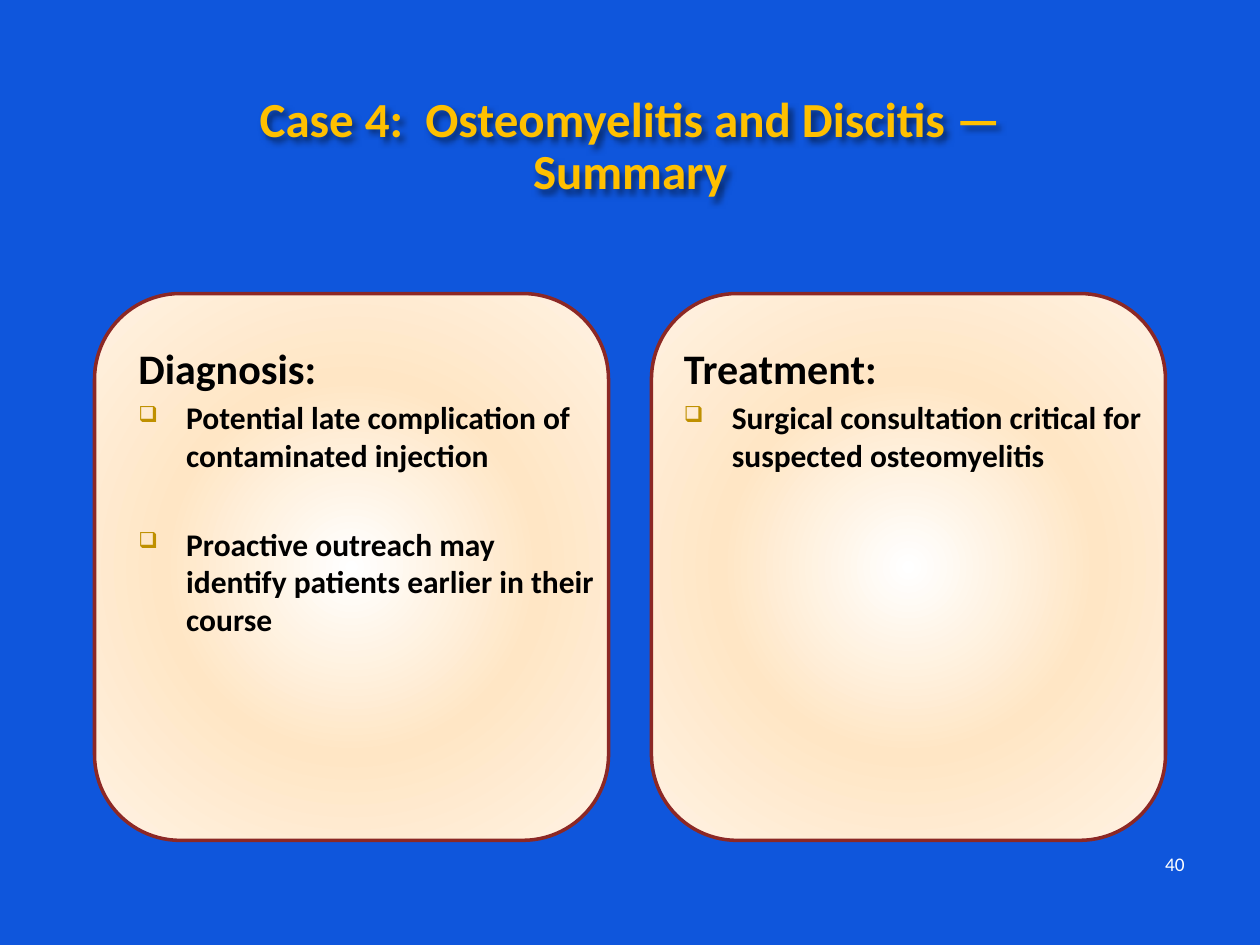
"""Build the Case 4 summary slide with diagnosis and treatment panels."""
from dataclasses import dataclass

from pptx import Presentation
from pptx.dml.color import RGBColor as RGB
from pptx.enum.shapes import MSO_SHAPE as Shape
from pptx.enum.text import MSO_ANCHOR as Anchor, PP_ALIGN as Align
from pptx.oxml import parse_xml
from pptx.oxml.ns import nsdecls, qn
from pptx.util import Inches, Pt


@dataclass(frozen=True)
class Theme:
    font: str = "Calibri"
    background: str = "0F56DC"
    title: str = "FFC000"
    text: str = "000000"
    number: str = "FFFFFF"
    bullet: str = "BF9000"
    border: str = "8C2825"
    glow: tuple = ((0, "FFFFFF"), (50, "FFE6C5"), (100, "FFF2E3"))
    title_size: int = 28
    heading_size: int = 24
    body_size: int = 18
    number_size: int = 11


@dataclass(frozen=True)
class Panel:
    left: float
    text_left: float
    text_width: float
    text_height: float
    heading: str
    points: tuple


THEME = Theme()
PANELS = (
    Panel(0.75, 1, 3.83, 3.99, "Diagnosis:", (
        "Potential late complication of contaminated injection",
        "Proactive outreach may identify patients earlier in their course")),
    Panel(5.17, 5.33, 4.08, 4.17, "Treatment:", (
        "Surgical consultation critical for suspected osteomyelitis",)),
)


def color(value: str) -> RGB:
    """Turn a hex string into a colour."""
    return RGB.from_string(value)


def write(p, text: str, *, size: int, fill: str = THEME.text, bold: bool = True,
          align=Align.LEFT, before: float = 0, leading: float | None = None,
          bullet: bool = False) -> None:
    """Fill one paragraph with formatted text."""
    if bullet:
        pPr = p._p.get_or_add_pPr()
        pPr.set("marL", str(Inches(0.38)))
        pPr.set("indent", str(Inches(-0.38)))
        for xml in (f'<a:buClr {nsdecls("a")}><a:srgbClr val="{THEME.bullet}"/></a:buClr>',
                    f'<a:buSzPct {nsdecls("a")} val="70000"/>',
                    f'<a:buChar {nsdecls("a")} char="❑"/>'):
            pPr.append(parse_xml(xml))
    p.text = text
    p.alignment = align
    p.space_before = Pt(before)
    if leading:
        p.line_spacing = Pt(leading)
    for r in p.runs:
        r.font.name = THEME.font
        r.font.size = Pt(size)
        r.font.bold = bold
        r.font.color.rgb = color(fill)


def add_text_frame(s, left: float, top: float, width: float, height: float):
    """Add a wrapping text box and return its frame."""
    tf = s.shapes.add_textbox(Inches(left), Inches(top), Inches(width), Inches(height)).text_frame
    tf.word_wrap = True
    return tf


def add_title(s, text: str) -> None:
    """Place the title with a soft shadow."""
    sp = s.shapes.title
    sp.left, sp.top, sp.width, sp.height = map(Inches, (0.5, 0.75, 9, 1.25))
    tf = sp.text_frame
    tf.vertical_anchor = Anchor.TOP
    tf.margin_top = 0
    write(tf.paragraphs[0], text, size=THEME.title_size, fill=THEME.title,
          align=Align.CENTER, leading=30)
    sp._element.spPr.append(parse_xml(
        f'<a:effectLst {nsdecls("a")}><a:outerShdw blurRad="{Pt(4)}" dist="{Pt(3)}" dir="2700000">'
        '<a:srgbClr val="000000"><a:alpha val="50000"/></a:srgbClr></a:outerShdw></a:effectLst>'))


def add_card(s, left: float) -> None:
    """Add a rounded card with a radial glow."""
    sp = s.shapes.add_shape(Shape.ROUNDED_RECTANGLE, Inches(left), Inches(2.33),
                            Inches(4.08), Inches(4.34))
    sp.shadow.inherit = False
    sp.fill.gradient()
    stops = "".join(f'<a:gs pos="{pos * 1000}"><a:srgbClr val="{value}"/></a:gs>'
                    for pos, value in THEME.glow)
    spPr = sp._element.spPr
    spPr.replace(spPr.find(qn("a:gradFill")), parse_xml(
        f'<a:gradFill {nsdecls("a")} rotWithShape="1"><a:gsLst>{stops}</a:gsLst><a:path path="circle">'
        '<a:fillToRect l="50000" t="50000" r="50000" b="50000"/></a:path></a:gradFill>'))
    sp.line.color.rgb = color(THEME.border)
    sp.line.width = Pt(2)


def add_panel(s, panel: Panel) -> None:
    """Draw a card with its heading and bullet points."""
    add_card(s, panel.left)
    tf = add_text_frame(s, panel.text_left, 2.67, panel.text_width, panel.text_height)
    write(tf.paragraphs[0], panel.heading, size=THEME.heading_size)
    for i, point in enumerate(panel.points):
        write(tf.add_paragraph(), point, size=THEME.body_size,
              before=29 if i else 3, bullet=True)


def main() -> None:
    """Build and save the slide."""
    prs = Presentation()
    prs.slide_width, prs.slide_height = Inches(10), Inches(7.5)
    s = prs.slides.add_slide(prs.slide_layouts[5])
    s.background.fill.solid()
    s.background.fill.fore_color.rgb = color(THEME.background)
    add_title(s, "Case 4:  Osteomyelitis and Discitis —\vSummary")
    for panel in PANELS:
        add_panel(s, panel)
    tf = add_text_frame(s, 0.5, 6.33, 9, 0.67)
    tf.vertical_anchor = Anchor.BOTTOM
    write(tf.paragraphs[0], "40", size=THEME.number_size, fill=THEME.number,
          bold=False, align=Align.RIGHT, leading=11)
    prs.save("out.pptx")


if __name__ == "__main__":
    main()
